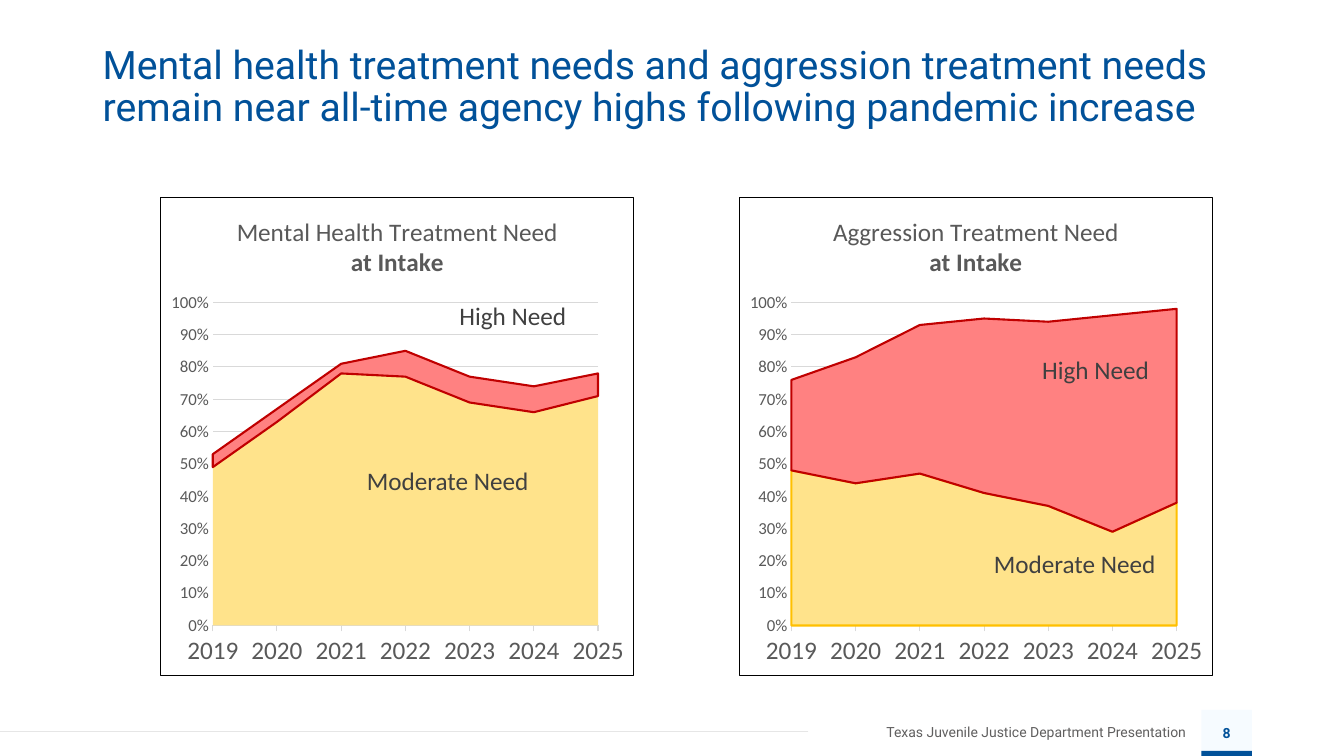
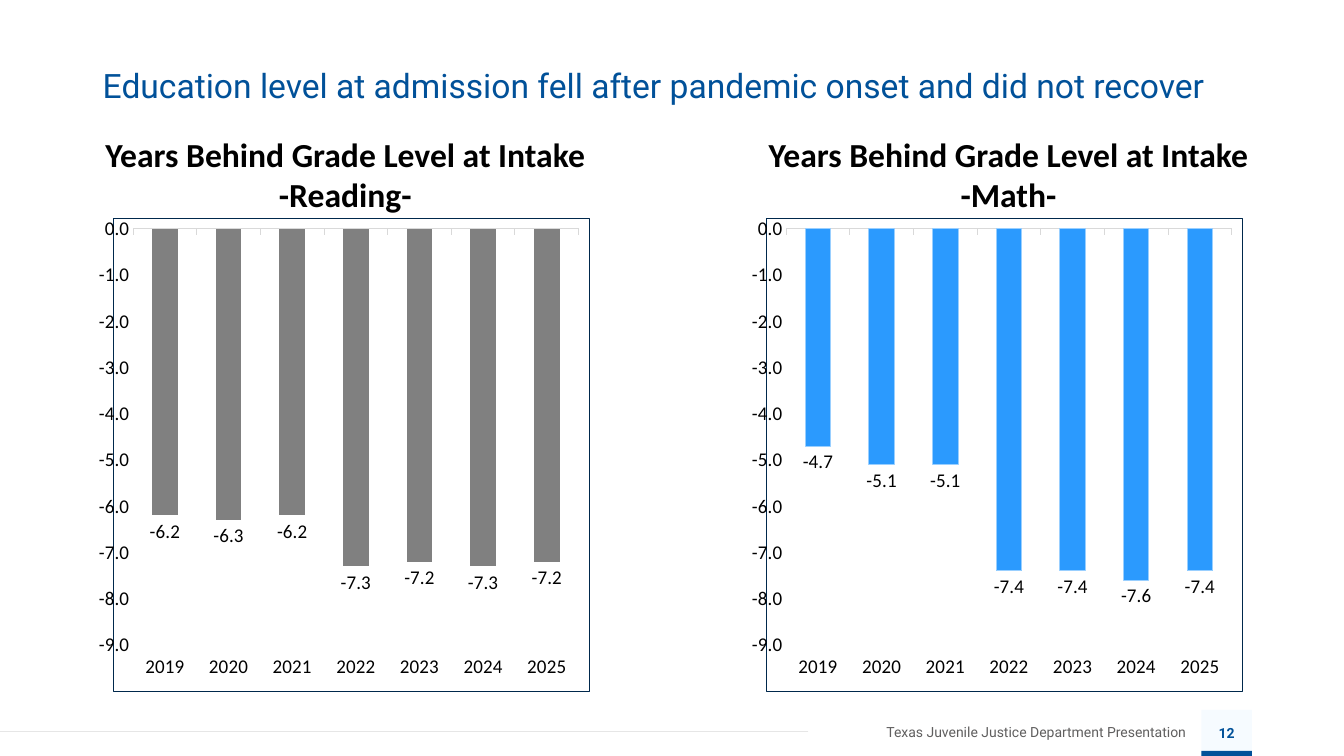
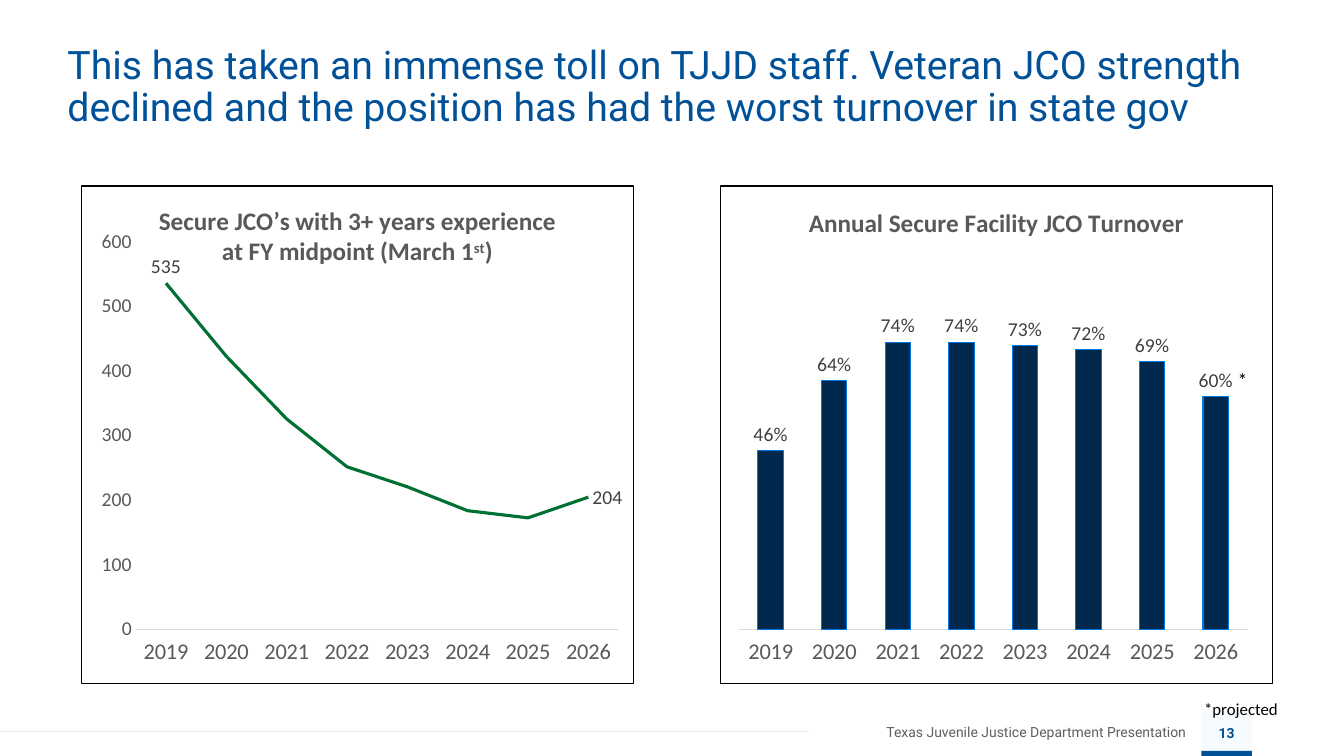
from lxml import etree
from pptx import Presentation
from pptx.chart.data import CategoryChartData as Data
from pptx.dml.color import RGBColor as RGB
from pptx.enum.chart import XL_CHART_TYPE as Kind
from pptx.enum.chart import XL_LABEL_POSITION as Pos
from pptx.enum.chart import XL_TICK_LABEL_POSITION as Side
from pptx.enum.chart import XL_TICK_MARK as Tick
from pptx.enum.shapes import MSO_CONNECTOR as Wire
from pptx.enum.shapes import MSO_SHAPE as Form
from pptx.enum.text import MSO_ANCHOR as Anchor
from pptx.enum.text import MSO_AUTO_SIZE as Fit
from pptx.enum.text import PP_ALIGN as Align
from pptx.oxml import parse_xml
from pptx.oxml.ns import nsdecls, qn
from pptx.util import Pt

HUE = {
    "blue": "015199", "pale": "F6FBFF", "rule": "E6E6E6", "foot": "605F5F",
    "black": "000000", "dark": "404040", "text": "595959", "grid": "D9D9D9",
    "sand": "FFE38B", "gold": "FFC000", "rose": "FF8181", "red": "C00000",
    "gray": "808080", "sky": "2B9AFE", "ice": "99CFFF", "navy": "00284C",
    "azure": "007AE6", "green": "007033",
}
HEAD, BODY = "Roboto", "Calibri"
FOOT = "Texas Juvenile Justice Department Presentation"


def rgb(name):
    return RGB.from_string(HUE[name])


def pts(box):
    return [Pt(n) for n in box]


# Text
def font(item, size, hue, face=BODY, bold=False):
    item.name, item.size, item.bold = face, Pt(size), bold
    item.color.rgb = rgb(hue)


def style(frame, size, hue, face=BODY, bold=False, align=None):
    for para in frame.paragraphs:
        para.alignment = align
        for run in para.runs:
            font(run.font, size, hue, face, bold)


def label(slide, box, text, size, hue, bold=False, align=Align.LEFT):
    frame = slide.shapes.add_textbox(*pts(box)).text_frame
    frame.text = text
    frame.word_wrap, frame.auto_size = False, Fit.SHAPE_TO_FIT_TEXT
    style(frame, size, hue, BODY, bold, align)


# Shared slide parts
def small(slide, box, text, hue, bold, align):
    frame = slide.shapes.add_textbox(*pts(box)).text_frame
    frame.text = text
    frame.margin_left = frame.margin_right = 0
    frame.margin_top = frame.margin_bottom = 0
    frame.word_wrap, frame.vertical_anchor = True, Anchor.MIDDLE
    style(frame, 10, hue, HEAD, bold, align)


def block(slide, box, hue):
    shape = slide.shapes.add_shape(Form.RECTANGLE, *pts(box))
    shape.shadow.inherit = False
    shape.fill.solid()
    shape.fill.fore_color.rgb = rgb(hue)
    shape.line.fill.background()


def footer(slide, page):
    small(slide, (577.5, 517, 269.5, 12), FOOT, "foot", False, Align.RIGHT)
    block(slide, (858.2, 507, 36, 33), "pale")
    small(slide, (863.2, 517.7, 26, 12), str(page), "blue", True, Align.CENTER)
    block(slide, (858.2, 536.4, 36, 3.6), "blue")
    line = slide.shapes.add_connector(
        Wire.STRAIGHT, *pts((577.5, 522.7, 0, 522.7)))
    line.line.color.rgb, line.line.width = rgb("rule"), Pt(0.5)
    etree.SubElement(line._element.spPr, qn("a:effectLst"))


def start(deck, page, text, box, size=28, anchor=Anchor.TOP):
    slide = deck.slides.add_slide(deck.slide_layouts[5])
    title = slide.shapes.title
    title.left, title.top, title.width, title.height = pts(box)
    frame = title.text_frame
    frame.text = text
    frame.word_wrap, frame.auto_size = True, Fit.NONE
    frame.vertical_anchor = anchor
    frame.paragraphs[0].line_spacing = 0.9
    style(frame, size, "blue", HEAD, align=Align.LEFT)
    footer(slide, page)
    return slide


# Chart parts
def border(chart, hue):
    part = parse_xml(
        f'<c:spPr {nsdecls("c", "a")}><a:noFill/><a:ln w="9525"><a:solidFill>'
        f'<a:srgbClr val="{HUE[hue]}"/></a:solidFill></a:ln></c:spPr>')
    chart._chartSpace.find(qn("c:chart")).addnext(part)


def layout(chart, plot):
    area = chart._chartSpace.find(".//" + qn("c:plotArea"))
    for old in area.findall(qn("c:layout")):
        area.remove(old)
    sizes = "".join(f'<c:{key} val="{val}"/>' for key, val in zip("xywh", plot))
    area.insert(0, parse_xml(
        f'<c:layout {nsdecls("c")}><c:manualLayout>'
        '<c:layoutTarget val="inner"/><c:xMode val="edge"/>'
        f'<c:yMode val="edge"/>{sizes}</c:manualLayout></c:layout>'))


def graph(slide, box, kind, years, rows, plot, edge="black"):
    data = Data()
    data.categories = years
    for num, row in enumerate(rows, 1):
        data.add_series(f"Series {num}", row)
    chart = slide.shapes.add_chart(kind, *pts(box), data).chart
    font(chart.font, 10, "black")
    chart.has_legend = chart.has_title = False
    chart.plots[0].vary_by_categories = False
    border(chart, edge)
    layout(chart, plot)
    return chart


def axes(chart, cat, val, hue, span, form, tick=Tick.OUTSIDE):
    base, side = chart.category_axis, chart.value_axis
    font(base.tick_labels.font, cat, hue)
    base.tick_label_position = Side.LOW
    base.major_tick_mark = tick
    base.format.line.color.rgb = rgb("grid")
    base.format.line.width = Pt(0.75)
    font(side.tick_labels.font, val, hue)
    side.minimum_scale, side.maximum_scale, side.major_unit = span
    side.tick_labels.number_format = form
    side.tick_labels.number_format_is_linked = False
    side.major_tick_mark = Tick.NONE
    side.has_major_gridlines = False
    side.format.line.fill.background()


def caption(chart, text, bold=True):
    chart.has_title = True
    frame = chart.chart_title.text_frame
    frame.text = text
    style(frame, 18, "text", bold=bold)
    return frame


def paint(item, fill, edge=None, width=0.75):
    item.format.fill.solid()
    item.format.fill.fore_color.rgb = rgb(fill)
    if edge:
        item.format.line.color.rgb = rgb(edge)
        item.format.line.width = Pt(width)
    else:
        item.format.line.fill.background()


def bars(chart, fill, edge, hue, form):
    chart.plots[0].gap_width = 150
    row = chart.plots[0].series[0]
    row.invert_if_negative = False
    paint(row, fill, edge)
    tags = row.data_labels
    tags.show_value, tags.position = True, Pos.OUTSIDE_END
    tags.number_format, tags.number_format_is_linked = form, False
    font(tags.font, 14, hue)


# Panels
def need(slide, box, years, name, rows, edge, high, mid):
    chart = graph(slide, box, Kind.AREA_STACKED, years, rows,
                  (0.11, 0.22, 0.815, 0.675))
    axes(chart, 18, 12, "text", (0, 1, 0.1), "0%")
    side = chart.value_axis
    side.has_major_gridlines = True
    side.major_gridlines.format.line.color.rgb = rgb("grid")
    side.major_gridlines.format.line.width = Pt(0.75)
    side._element.find(qn("c:crossBetween")).set("val", "midCat")
    low, top = chart.plots[0].series
    paint(low, "sand", edge, 1.5)
    paint(top, "rose", "red", 1.5)
    frame = caption(chart, f"{name} Treatment Need\nat Intake", False)
    frame.paragraphs[1].runs[0].font.bold = True
    for text, (x, y), wide in (("High Need", high, 92),
                               ("Moderate Need", mid, 132)):
        label(slide, (box[0] + x, box[1] + y, wide, 29), text, 18, "dark")


def grade(slide, box, years, name, row, fill, edge, shift):
    chart = graph(slide, box, Kind.COLUMN_CLUSTERED, years, [row],
                  (0.042, 0.022, 0.936, 0.879), "navy")
    axes(chart, 14, 14, "black", (-9, 0, 1), "0.0")
    bars(chart, fill, edge, "black", "0.0")
    label(slide, (box[0] + shift, box[1] - 63, 366.5, 65.5),
          f"Years Behind Grade Level at Intake\n-{name}-",
          24, "black", True, Align.CENTER)


def staff(slide, box, years, row):
    chart = graph(slide, box, Kind.LINE, years, [row],
                  (0.099, 0.111, 0.874, 0.779))
    axes(chart, 16, 14, "text", (0, 600, 100), "General", Tick.NONE)
    line = chart.plots[0].series[0]
    line.smooth = False
    line.format.line.color.rgb = rgb("green")
    line.format.line.width = Pt(2.25)
    line.data_labels.show_value = False
    for spot, pos in ((0, Pos.ABOVE), (7, Pos.RIGHT)):
        tag = line.points[spot].data_label
        tag.position = pos
        font(tag.font, 14, "dark")
    frame = caption(chart, "Secure JCO’s with 3+ years experience\n"
                           "at FY midpoint (March 1")
    last = frame.paragraphs[1]
    for part in ("st", ")"):
        last.add_run().text = part
    style(frame, 18, "text", bold=True)
    last.runs[1]._r.get_or_add_rPr().set("baseline", "30000")


def leave(slide, box, years, row):
    chart = graph(slide, box, Kind.COLUMN_CLUSTERED, years, [row],
                  (0.034, 0.111, 0.921, 0.779))
    axes(chart, 16, 14, "text", (0, 1, 1), "0%", Tick.NONE)
    chart.value_axis.visible = False
    bars(chart, "navy", "azure", "dark", "0%")
    caption(chart, "Annual Secure Facility JCO Turnover")
    x, y = box[:2]
    label(slide, (x + 363, y + 126.7, 21.6, 24.5), "*", 14, "black")
    label(slide, (x + 339, y + 363, 67.7, 21.6), "*projected", 12, "black")


# Slides
def needs(deck, years):
    slide = start(deck, 8, "Mental health treatment needs and aggression "
                  "treatment needs remain near all-time agency highs "
                  "following pandemic increase", (66.2, 28.8, 828, 56))
    top, size = 140.4, (338.4, 342.7)
    need(slide, (527.8, top, *size), years, "Aggression",
         [(0.48, 0.44, 0.47, 0.41, 0.37, 0.29, 0.38),
          (0.28, 0.39, 0.46, 0.54, 0.57, 0.67, 0.6)],
         "gold", (209.5, 109.4), (175, 247.7))
    need(slide, (114.5, top, *size), years, "Mental Health",
         [(0.49, 0.63, 0.78, 0.77, 0.69, 0.66, 0.71),
          (0.04, 0.04, 0.03, 0.08, 0.08, 0.08, 0.07)],
         None, (206.6, 70.6), (140.4, 188.6))


def school(deck, years):
    slide = start(deck, 12, "Education level at admission fell after pandemic "
                  "onset and did not recover", (66.2, 28.8, 828, 67),
                  24, Anchor.MIDDLE)
    top, size = 154.8, (350.6, 339.8)
    grade(slide, (70.6, top, *size), years, "Reading",
          (-6.2, -6.3, -6.2, -7.3, -7.2, -7.3, -7.2), "gray", None, -7.2)
    grade(slide, (537.1, top, *size), years, "Math",
          (-4.7, -5.1, -5.1, -7.4, -7.4, -7.6, -7.4), "sky", "ice", 0)


def toll(deck, years):
    slide = start(deck, 13, "This has taken an immense toll on TJJD staff. "
                  "Veteran JCO strength declined and the position has had "
                  "the worst turnover in state gov", (41, 28.8, 900.7, 62))
    top, size = 132.5, (395.3, 356.4)
    leave(slide, (514, top, *size), years,
          (0.46, 0.64, 0.74, 0.74, 0.73, 0.72, 0.69, 0.6))
    staff(slide, (57.6, top, *size), years,
          (535, 422, 325, 251, 220, 183, 172, 204))


def main():
    deck = Presentation()
    deck.slide_width, deck.slide_height = Pt(960), Pt(540)
    years = [str(year) for year in range(2019, 2027)]
    needs(deck, years[:-1])
    school(deck, years[:-1])
    toll(deck, years)
    deck.save("out.pptx")


if __name__ == "__main__":
    main()
